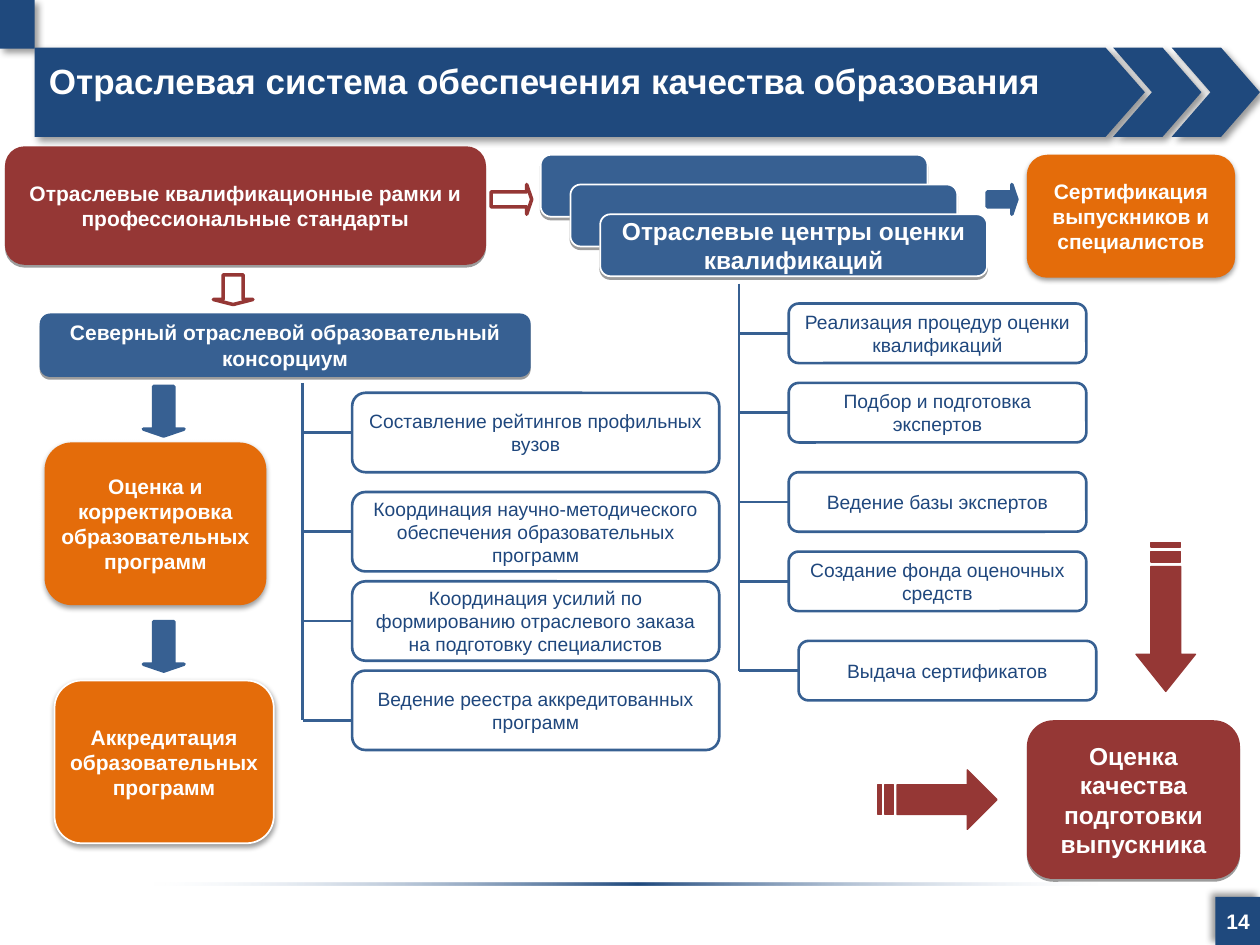
from lxml import etree
from pptx import Presentation
from pptx.dml.color import RGBColor
from pptx.enum.shapes import MSO_CONNECTOR, MSO_SHAPE
from pptx.enum.text import MSO_ANCHOR, PP_ALIGN
from pptx.oxml import parse_xml
from pptx.oxml.ns import nsdecls, qn
from pptx.util import Inches, Mm, Pt

ROUNDED = MSO_SHAPE.ROUNDED_RECTANGLE
PLATE, CHEVRON = MSO_SHAPE.PENTAGON, MSO_SHAPE.CHEVRON
ARROW = MSO_SHAPE.RIGHT_ARROW
STRAIGHT = MSO_CONNECTOR.STRAIGHT
CENTER, MIDDLE = PP_ALIGN.CENTER, MSO_ANCHOR.MIDDLE
COLORS = {"navy": "1F497D", "blue": "376092", "red": "953735", "orange": "E46C0A",
          "white": "FFFFFF", "ink": "1F477D", "pale": "DCE6F2", "shadow": "000000"}
CELL = Mm(2)  # the slide is 127 columns wide; every length below is in cells

# Shadows: opacity in percent, blur and distance in points, direction in degrees
FRAME_SHADOW, NUMBER_SHADOW = (40, 4, 3, 45), (40, 4, 3, 225)
FLAT_SHADOW, SOFT_SHADOW = (38, 0, 1.6, 90), (38, 3.1, 1.6, 90)


def paint(shape, fill=None, line=None, width=1, shadow=None):
    """Set fill, outline and outer shadow; None leaves each of them out."""
    if fill:
        shape.fill.solid()
        shape.fill.fore_color.rgb = RGBColor.from_string(COLORS[fill])
    else:
        shape.fill.background()
    if line:
        shape.line.color.rgb = RGBColor.from_string(COLORS[line])
        shape.line.width = Pt(width)
    else:
        shape.line.fill.background()
    shape.shadow.inherit = False
    if shadow:
        opacity, blur, distance, direction = shadow
        effects = shape._element.spPr.find(qn("a:effectLst"))
        effects.append(parse_xml(
            f'<a:outerShdw {nsdecls("a")} blurRad="{Pt(blur)}" dist="{Pt(distance)}" '
            f'dir="{direction * 60000}" algn="ctr" rotWithShape="0">'
            f'<a:srgbClr val="{COLORS["shadow"]}"><a:alpha val="{opacity * 1000}"/>'
            '</a:srgbClr></a:outerShdw>'))


def write(shape, text, size, color="white", bold=True, insets=None):
    """Fill a shape with centred Arial text; insets are (sides, top and bottom) in inches."""
    frame = shape.text_frame
    frame.text = text
    frame.word_wrap = True
    frame.vertical_anchor = MIDDLE
    if insets:
        frame.margin_left = frame.margin_right = Inches(insets[0])
        frame.margin_top = frame.margin_bottom = Inches(insets[1])
    paragraph = frame.paragraphs[0]
    paragraph.alignment = CENTER
    font = paragraph.runs[0].font
    font.name, font.size, font.bold = "Arial", Pt(size), bold
    font.color.rgb = RGBColor.from_string(COLORS[color])


presentation = Presentation()
presentation.slide_width, presentation.slide_height = Inches(10), Inches(7.5)
slide = presentation.slides.add_slide(presentation.slide_layouts[5])
shapes = slide.shapes

# Header band, corner tiles and footer rule
for preset, point, cells, shadow in (
    (PLATE, 0, (122.5, 90.4, 4.5, 4.85), NUMBER_SHADOW),
    (PLATE, 0, (0, 0, 3.5, 4.9), FRAME_SHADOW),
    (PLATE, 0.44, (3.5, 4.8, 111.9, 9), FRAME_SHADOW),
    (PLATE, 0, (3.6, 89, 119, 0.25), None),
    (CHEVRON, 0.44, (112.2, 4.8, 8.9, 9), FRAME_SHADOW),
    (CHEVRON, 0.44, (118.1, 4.8, 8.9, 9), FRAME_SHADOW),
):
    part = shapes.add_shape(preset, *(round(cell * CELL) for cell in cells))
    part.adjustments[0] = point
    paint(part, "navy", shadow=shadow)
    if shadow is None:
        part.fill.gradient()
        part.fill.gradient_angle = 0
        stops = part._element.spPr.find(qn("a:gradFill")).find(qn("a:gsLst"))
        for stop in list(stops):
            stops.remove(stop)
        for position, color, opacity in ((10, "pale", 0), (51, "navy", 100), (90, "pale", 0)):
            stop = etree.SubElement(stops, qn("a:gs"), pos=str(position * 1000))
            tint = etree.SubElement(stop, qn("a:srgbClr"), val=COLORS[color])
            etree.SubElement(tint, qn("a:alpha"), val=str(opacity * 1000))

# Title, raised above the band
title = shapes.title
title.left, title.top, title.width, title.height = (
    round(cell * CELL) for cell in (3.5, 4.5, 102.8, 8))
write(title, "Отраслевая система обеспечения качества образования", 20, insets=(0, 0))
title.text_frame.paragraphs[0].line_spacing = 0.8
title._element.getparent().append(title._element)

# Filled blocks; the three evaluation centres are stacked in steps of three cells
stack = [((54.5 + 3 * step, 15.6 + 3 * step, 39, 6.25), "blue", "white", FLAT_SHADOW, 14,
          "Отраслевые центры оценки квалификаций" if step == 2 else "") for step in range(3)]
for cells, fill, line, shadow, size, text in [
    ((0.5, 14.75, 48.5, 11.95), "red", None, FLAT_SHADOW, 12,
     "Отраслевые квалификационные рамки и профессиональные стандарты"),
    ((4.5, 44.6, 22.35, 16.4), "orange", None, SOFT_SHADOW, 12,
     "Оценка и корректировка образовательных программ"),
    ((103.5, 72.6, 21.5, 16), "red", None, FLAT_SHADOW, 14,
     "Оценка качества подготовки выпускника"),
    ((5.5, 68.6, 22.1, 16.4), "orange", "white", SOFT_SHADOW, 12,
     "Аккредитация образовательных программ"),
    ((103.5, 15.6, 21, 12.4), "orange", None, SOFT_SHADOW, 12,
     "Сертификация выпускников и специалистов"),
    ((4, 31.6, 49.5, 6.4), "blue", None, FLAT_SHADOW, 12,
     "Северный отраслевой образовательный консорциум"),
] + stack:
    block = shapes.add_shape(ROUNDED, *(round(cell * CELL) for cell in cells))
    paint(block, fill, line, shadow=shadow)
    if text:
        write(block, text, size, insets=(0.02, 0.02))

number = shapes.add_textbox(*(round(cell * CELL) for cell in (122.3, 90.7, 5, 4.2)))
write(number, "14", 12)
number.text_frame.word_wrap = False

# Task trees: trunk column and top, box size, then left, top, branch row and text of each task
for trunk, trunk_top, width, height, tasks in (
    (74.5, 28.6, 30, 6, (
        (79.5, 30.6, 33.6, "Реализация процедур оценки квалификаций"),
        (79.5, 38.6, 41.6, "Подбор и подготовка экспертов"),
        (79.5, 47.6, 50.6, "Ведение базы экспертов"),
        (79.5, 55.6, 58.6, "Создание фонда оценочных средств"),
        (80.5, 64.6, 67.6, "Выдача сертификатов"))),
    (30.5, 38.6, 37, 8, (
        (35.5, 39.6, 43.6, "Составление рейтингов профильных вузов"),
        (35.5, 49.6, 53.6, "Координация научно-методического обеспечения образовательных программ"),
        (35.5, 58.6, 62.6,
         "Координация усилий по формированию отраслевого заказа на подготовку специалистов"),
        (35.5, 67.6, 72.6, "Ведение реестра аккредитованных программ"))),
):
    lines = [(trunk, trunk_top, trunk, tasks[-1][2])]
    for left, top, row, text in tasks:
        box = shapes.add_shape(
            ROUNDED, *(round(cell * CELL) for cell in (left, top, width, height)))
        paint(box, "white", "blue", 1.5)
        write(box, text, 11, "ink", bold=False)
        lines.append((trunk, row, left, row))
    for ends in lines:
        connector = shapes.add_connector(STRAIGHT, *(round(cell * CELL) for cell in ends))
        connector.line.color.rgb = RGBColor.from_string(COLORS["blue"])
        connector.line.width = Pt(1.5)
        etree.SubElement(connector._element.spPr, qn("a:effectLst"))

# Block arrows between stages
for cells, rotation, fill, line in (
    ((99.5, 18.6, 3, 3), 0, "blue", "blue"),
    ((14, 63.1, 5, 4.1), 90, "blue", "blue"),
    ((14, 39.4, 5, 4.1), 90, "blue", "blue"),
    ((49.5, 18.6, 4.1, 3), 0, None, "red"),
    ((22, 27.2, 3, 4), 90, None, "red"),
):
    arrow = shapes.add_shape(ARROW, *(round(cell * CELL) for cell in cells))
    arrow.adjustments[0], arrow.adjustments[1] = 0.5, 0.17
    arrow.rotation = rotation
    paint(arrow, fill, line, 2)

# Striped arrows to the final assessment, outlined in shares of their length and thickness
outlines = (
    ((0, 0.25), (0, 0.75), (0.03, 0.75), (0.03, 0.25)),
    ((0.06, 0.25), (0.06, 0.75), (0.13, 0.75), (0.13, 0.25)),
    ((0.75, 0), (0.75, 0.25), (0.16, 0.25), (0.16, 0.75), (0.75, 0.75), (0.75, 1), (1, 0.5)),
)
for left, top, length, thickness, rotation in ((88.5, 77.6, 12, 6, 0), (110, 59.2, 15, 6, 90)):
    contours = [[(round((left + x * length) * CELL), round((top + y * thickness) * CELL))
                 for x, y in outline] for outline in outlines]
    builder = shapes.build_freeform(*contours[0][0])
    for index, contour in enumerate(contours):
        if index:
            builder.move_to(*contour[0])
        builder.add_line_segments(contour[1:], close=True)
    striped_arrow = builder.convert_to_shape()
    striped_arrow.rotation = rotation
    paint(striped_arrow, "red", "red", 0.75)

presentation.save("out.pptx")
